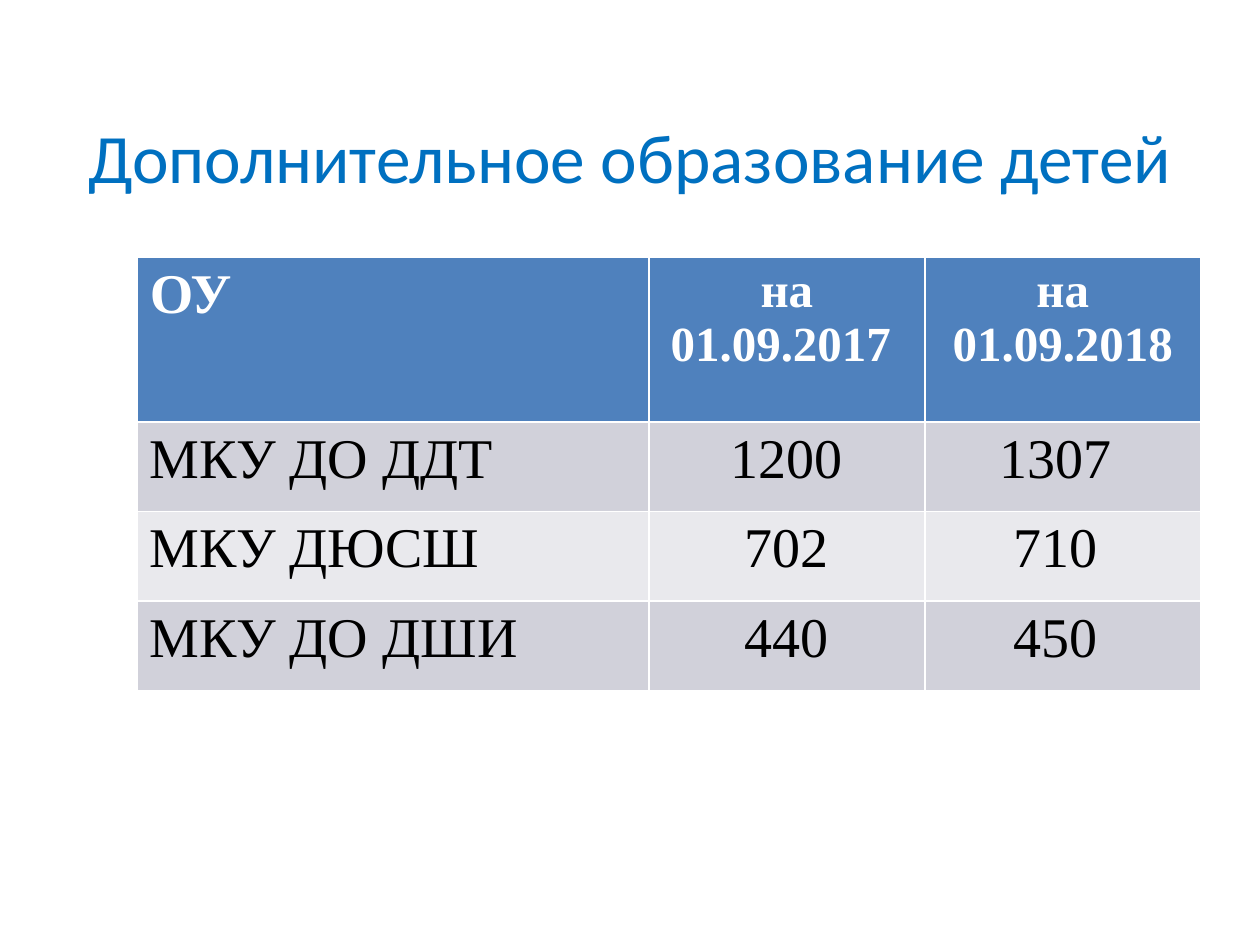
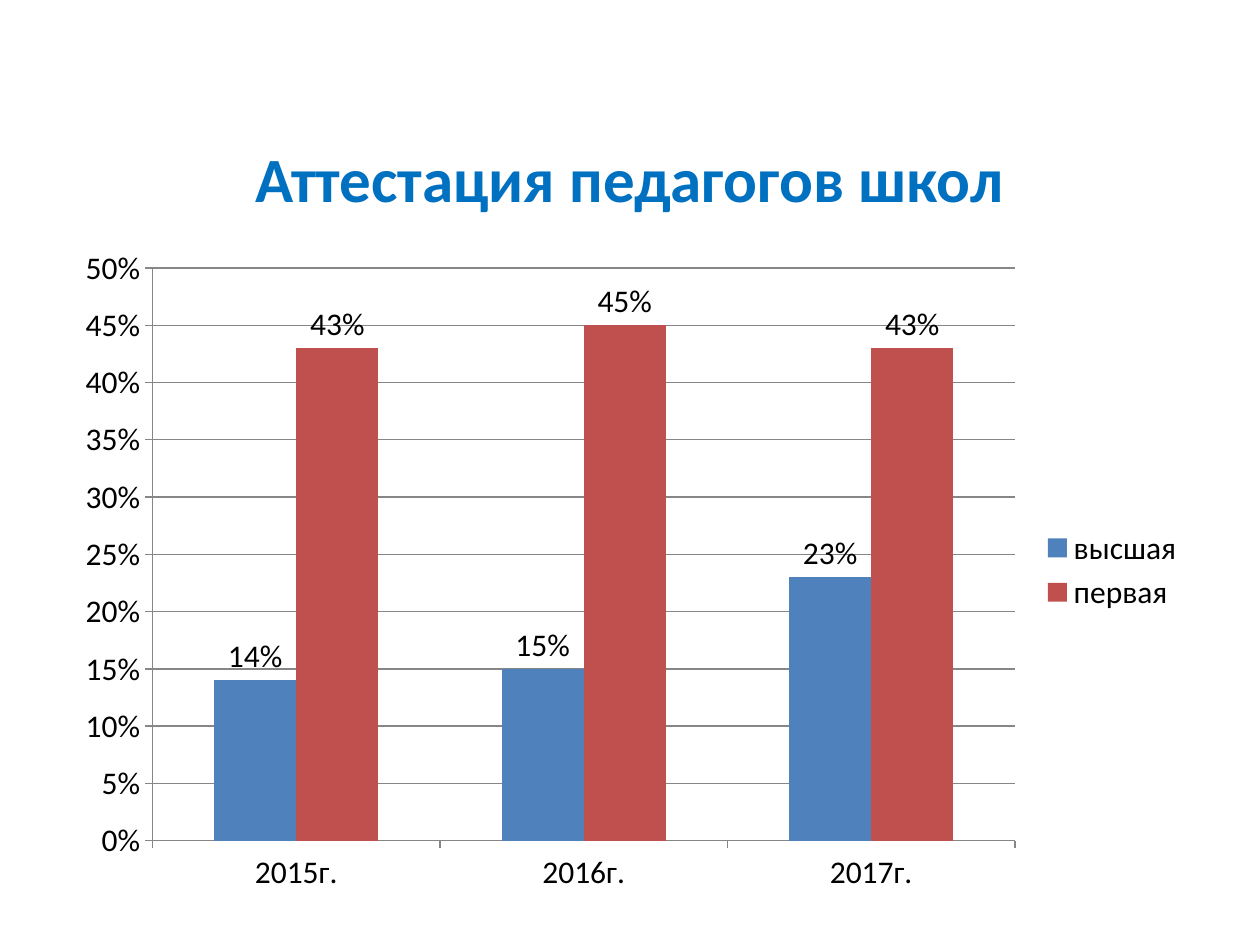
from dataclasses import dataclass

from pptx import Presentation
from pptx.chart.data import CategoryChartData
from pptx.dml.color import RGBColor
from pptx.enum.chart import XL_CHART_TYPE, XL_LABEL_POSITION, XL_LEGEND_POSITION, XL_TICK_MARK
from pptx.enum.text import MSO_ANCHOR, MSO_AUTO_SIZE, PP_ALIGN
from pptx.util import Inches, Pt

CLUSTERED = XL_CHART_TYPE.COLUMN_CLUSTERED
OUTSIDE_END = XL_LABEL_POSITION.OUTSIDE_END
LEGEND_RIGHT = XL_LEGEND_POSITION.RIGHT
TICK_OUTSIDE = XL_TICK_MARK.OUTSIDE
MIDDLE = MSO_ANCHOR.MIDDLE
NO_AUTOFIT = MSO_AUTO_SIZE.NONE
LEFT, CENTER = PP_ALIGN.LEFT, PP_ALIGN.CENTER
TITLE_ONLY = 5


@dataclass(frozen=True)
class Theme:
    title: str = "0070C0"
    blue: str = "4F81BD"
    red: str = "C0504D"
    white: str = "FFFFFF"
    black: str = "000000"
    grid: str = "868686"
    bands: tuple = ("D1D1DA", "E9E9ED")
    sans: str = "Calibri"
    serif: str = "Times New Roman"
    wide_title_size: float = 39.6
    title_size: float = 36
    table_size: float = 32
    date_size: float = 28
    chart_size: float = 18


THEME = Theme()


def set_attributes(target, values):
    for name, value in values.items():
        setattr(target, name, value)


def format_font(font, name, size, color, bold=False):
    set_attributes(font, {"name": name, "size": Pt(size), "bold": bold})
    font.color.rgb = RGBColor.from_string(color)


def fill_solid(fill, color):
    fill.solid()
    fill.fore_color.rgb = RGBColor.from_string(color)


def add_titled_slide(presentation, text, top, height, size, bold=False):
    slide = presentation.slides.add_slide(presentation.slide_layouts[TITLE_ONLY])
    title = slide.shapes.title
    set_attributes(title, {
        "left": Inches(0.5), "top": Inches(top),
        "width": Inches(9), "height": Inches(height),
    })
    frame = title.text_frame
    set_attributes(frame, {
        "text": text, "word_wrap": True,
        "auto_size": NO_AUTOFIT, "vertical_anchor": MIDDLE,
    })
    paragraph = frame.paragraphs[0]
    paragraph.alignment = CENTER
    format_font(paragraph.runs[0].font, THEME.sans, size, THEME.title, bold)
    return slide


def fill_cell(cell, text, fill, alignment, size, color, bold):
    fill_solid(cell.fill, fill)
    cell.text = text
    paragraph = cell.text_frame.paragraphs[0]
    paragraph.alignment = alignment
    format_font(paragraph.runs[0].font, THEME.serif, size, color, bold)


def add_enrolment_table(slide, rows, column_widths, row_heights):
    table = slide.shapes.add_table(
        len(rows), len(column_widths), Inches(1.09), Inches(2.04),
        Inches(sum(column_widths)), Inches(sum(row_heights)),
    ).table
    for column, width in zip(table.columns, column_widths):
        column.width = Inches(width)
    for row, height in zip(table.rows, row_heights):
        row.height = Inches(height)
    for row_index, row in enumerate(rows):
        header = row_index == 0
        fill = THEME.blue if header else THEME.bands[(row_index - 1) % 2]
        color = THEME.white if header else THEME.black
        for column_index, text in enumerate(row):
            alignment = CENTER if column_index else LEFT
            size = THEME.date_size if header and column_index else THEME.table_size
            fill_cell(table.cell(row_index, column_index), text, fill, alignment, size, color, header)


def add_certification_chart(slide, years, shares):
    data = CategoryChartData(number_format="0%")
    data.categories = years
    for name, (values, _) in shares.items():
        data.add_series(name, values)
    chart = slide.shapes.add_chart(
        CLUSTERED, Inches(0.5), Inches(1.87), Inches(9), Inches(5.31), data
    ).chart
    format_font(chart.font, THEME.sans, THEME.chart_size, THEME.black)
    set_attributes(chart, {"has_title": False, "has_legend": True})
    set_attributes(chart.legend, {"position": LEGEND_RIGHT, "include_in_layout": False})

    plot = chart.plots[0]
    set_attributes(plot, {
        "gap_width": 150, "overlap": 0,
        "vary_by_categories": False, "has_data_labels": True,
    })
    set_attributes(plot.data_labels, {
        "show_value": True, "number_format": "0%",
        "number_format_is_linked": False, "position": OUTSIDE_END,
    })
    for series, (_, color) in zip(plot.series, shares.values()):
        fill_solid(series.format.fill, color)

    value_axis = chart.value_axis
    set_attributes(value_axis, {
        "minimum_scale": 0, "maximum_scale": 0.5,
        "major_unit": 0.05, "has_major_gridlines": True,
    })
    set_attributes(value_axis.tick_labels, {"number_format": "0%", "number_format_is_linked": False})
    for axis in (value_axis, chart.category_axis):
        axis.major_tick_mark = TICK_OUTSIDE
    for part in (value_axis, chart.category_axis, value_axis.major_gridlines):
        line = part.format.line
        line.width = Pt(0.75)
        line.color.rgb = RGBColor.from_string(THEME.grid)


def main():
    presentation = Presentation()
    set_attributes(presentation, {"slide_width": Inches(10), "slide_height": Inches(7.5)})

    enrolment = add_titled_slide(
        presentation, "Дополнительное образование детей", 0.9, 0.67, THEME.wide_title_size
    )
    add_enrolment_table(
        enrolment,
        [
            ("ОУ", "на 01.09.2017 ", "на 01.09.2018"),
            ("МКУ ДО ДДТ", "1200", "1307 "),
            ("МКУ ДЮСШ", "702", "710 "),
            ("МКУ ДО ДШИ", "440", "450 "),
        ],
        [4.06] + [2.19] * 2,
        [1.31] + [0.71] * 3,
    )

    certification = add_titled_slide(
        presentation, "Аттестация педагогов школ", 0.86, 1.09, THEME.title_size, bold=True
    )
    add_certification_chart(
        certification,
        ["2015г.", "2016г.", "2017г."],
        {
            "высшая": ((0.14, 0.15, 0.23), THEME.blue),
            "первая": ((0.43, 0.45, 0.43), THEME.red),
        },
    )
    presentation.save("out.pptx")


if __name__ == "__main__":
    main()
